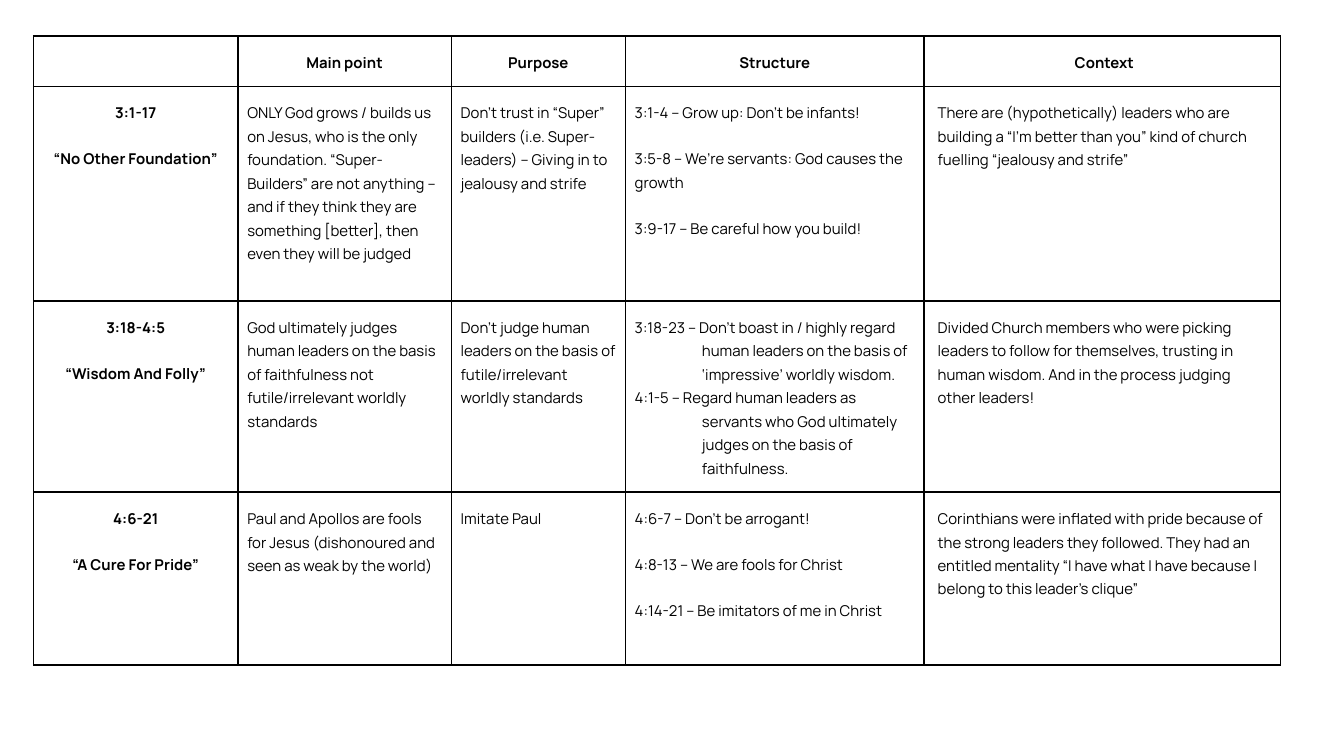
from dataclasses import dataclass

from lxml.etree import SubElement
from pptx import Presentation
from pptx.dml.color import RGBColor
from pptx.enum.text import PP_ALIGN
from pptx.oxml.ns import qn
from pptx.util import Pt


@dataclass(frozen=True)
class Theme:
    font: str = "Manrope"
    size: float = 8
    ink: str = "000000"
    paper: str = "FFFFFF"
    border: float = 1
    line_spacing: float = 1.15
    gap: float = 12


THEME = Theme()
COLUMN_WIDTHS = [109.5, 114.3, 93.3, 160.1, 190.8]
ROW_HEIGHTS = [26.8, 115, 102.4, 92.4]
CONTEXT_INDENT = 2.2
HANGING_INDENT = 36

HEADINGS = ["", "Main point", "Purpose", "Structure", "Context"]
# Each passage: title lines, main point, purpose, structure lines, context
PASSAGES = [
    (
        ["3:1-17", "“No Other Foundation”"],
        "ONLY God grows / builds us on Jesus, who is the only foundation. “Super-Builders” are not "
        "anything – and if they think they are something [better], then even they will be judged",
        "Don’t trust in “Super” builders (i.e. Super-leaders) – Giving in to jealousy and strife",
        ["3:1-4 – Grow up: Don’t be infants!",
         "3:5-8 – We’re servants: God causes the growth",
         "3:9-17 – Be careful how you build!"],
        "There are (hypothetically) leaders who are building a “I’m better than you” kind of church "
        "fuelling “jealousy and strife”",
    ),
    (
        ["3:18-4:5", "“Wisdom And Folly”"],
        "God ultimately judges human leaders on the basis of faithfulness not futile/irrelevant "
        "worldly standards",
        "Don’t judge human leaders on the basis of futile/irrelevant worldly standards",
        ["3:18-23 – Don’t boast in / highly regard human leaders on the basis of ‘impressive’ "
         "worldly wisdom.",
         "4:1-5 – Regard human leaders as servants who God ultimately judges on the basis of "
         "faithfulness."],
        "Divided Church members who were picking leaders to follow for themselves, trusting in "
        "human wisdom. And in the process judging other leaders!",
    ),
    (
        ["4:6-21", "“A Cure For Pride”"],
        "Paul and Apollos are fools for Jesus (dishonoured and seen as weak by the world)",
        "Imitate Paul",
        ["4:6-7 – Don’t be arrogant!",
         "4:8-13 – We are fools for Christ",
         "4:14-21 – Be imitators of me in Christ"],
        "Corinthians were inflated with pride because of the strong leaders they followed. They had "
        "an entitled mentality “I have what I have because I belong to this leader’s clique”",
    ),
]
HANGING_PASSAGE = 2


def write_text(frame, lines, bold=False, align=PP_ALIGN.LEFT, gap=THEME.gap, left=0, first=0):
    """Write one paragraph for each line, all in the same format."""
    for index, line in enumerate(lines):
        para = frame.paragraphs[0] if index == 0 else frame.add_paragraph()
        para.alignment = align
        para.line_spacing = THEME.line_spacing
        para.space_before = Pt(gap)
        properties = para._p.get_or_add_pPr()
        properties.set("marL", str(Pt(left)))
        properties.set("indent", str(Pt(first)))
        if not line:
            # An empty cell still needs its type size, or the row grows
            SubElement(para._p, qn("a:endParaRPr"), sz=str(int(THEME.size * 100)))
            continue
        span = para.add_run()
        span.text = line
        span.font.name = THEME.font
        span.font.size = Pt(THEME.size)
        span.font.bold = bold
        span.font.color.rgb = RGBColor.from_string(THEME.ink)


def style_cell(cell):
    """Set margins, borders and a plain fill."""
    cell.margin_left = cell.margin_right = Pt(5)
    cell.margin_top = cell.margin_bottom = Pt(7.2)
    properties = cell._tc.get_or_add_tcPr()
    for side in ("lnL", "lnR", "lnT", "lnB"):
        line = SubElement(properties, qn(f"a:{side}"), w=str(Pt(THEME.border)))
        fill = SubElement(line, qn("a:solidFill"))
        SubElement(fill, qn("a:srgbClr"), val=THEME.ink)
    cell.fill.solid()
    cell.fill.fore_color.rgb = RGBColor.from_string(THEME.paper)


def add_passage_table(page, left, top, width, height):
    """Place the table, sharing the box out in proportion to its columns and rows."""
    table = page.shapes.add_table(
        len(ROW_HEIGHTS), len(COLUMN_WIDTHS), Pt(left), Pt(top), Pt(width), Pt(height)
    ).table
    table.first_row = table.horz_banding = False
    for column, share in zip(table.columns, COLUMN_WIDTHS):
        column.width = Pt(width * share / sum(COLUMN_WIDTHS))
    for row, share in zip(table.rows, ROW_HEIGHTS):
        row.height = Pt(height * share / sum(ROW_HEIGHTS))
    for cell in table.iter_cells():
        style_cell(cell)

    # Heading row
    for index, heading in enumerate(HEADINGS):
        indent = CONTEXT_INDENT if heading == "Context" else 0
        write_text(table.cell(0, index).text_frame, [heading], bold=True,
                   align=PP_ALIGN.CENTER, left=indent)

    # One row for each passage
    for index, (title, point, purpose, structure, context) in enumerate(PASSAGES, start=1):
        frames = [table.cell(index, column).text_frame for column in range(len(HEADINGS))]
        write_text(frames[0], title, bold=True, align=PP_ALIGN.CENTER)
        write_text(frames[1], [point])
        write_text(frames[2], [purpose])
        if index == HANGING_PASSAGE:
            write_text(frames[3], structure, gap=0, left=HANGING_INDENT, first=-HANGING_INDENT)
        else:
            write_text(frames[3], structure)
        write_text(frames[4], [context], left=CONTEXT_INDENT)


def main():
    deck = Presentation()
    deck.slide_width, deck.slide_height = Pt(720), Pt(405)
    page = deck.slides.add_slide(deck.slide_layouts[6])
    add_passage_table(page, 18, 19.4, sum(COLUMN_WIDTHS), sum(ROW_HEIGHTS))
    deck.save("out.pptx")


if __name__ == "__main__":
    main()
